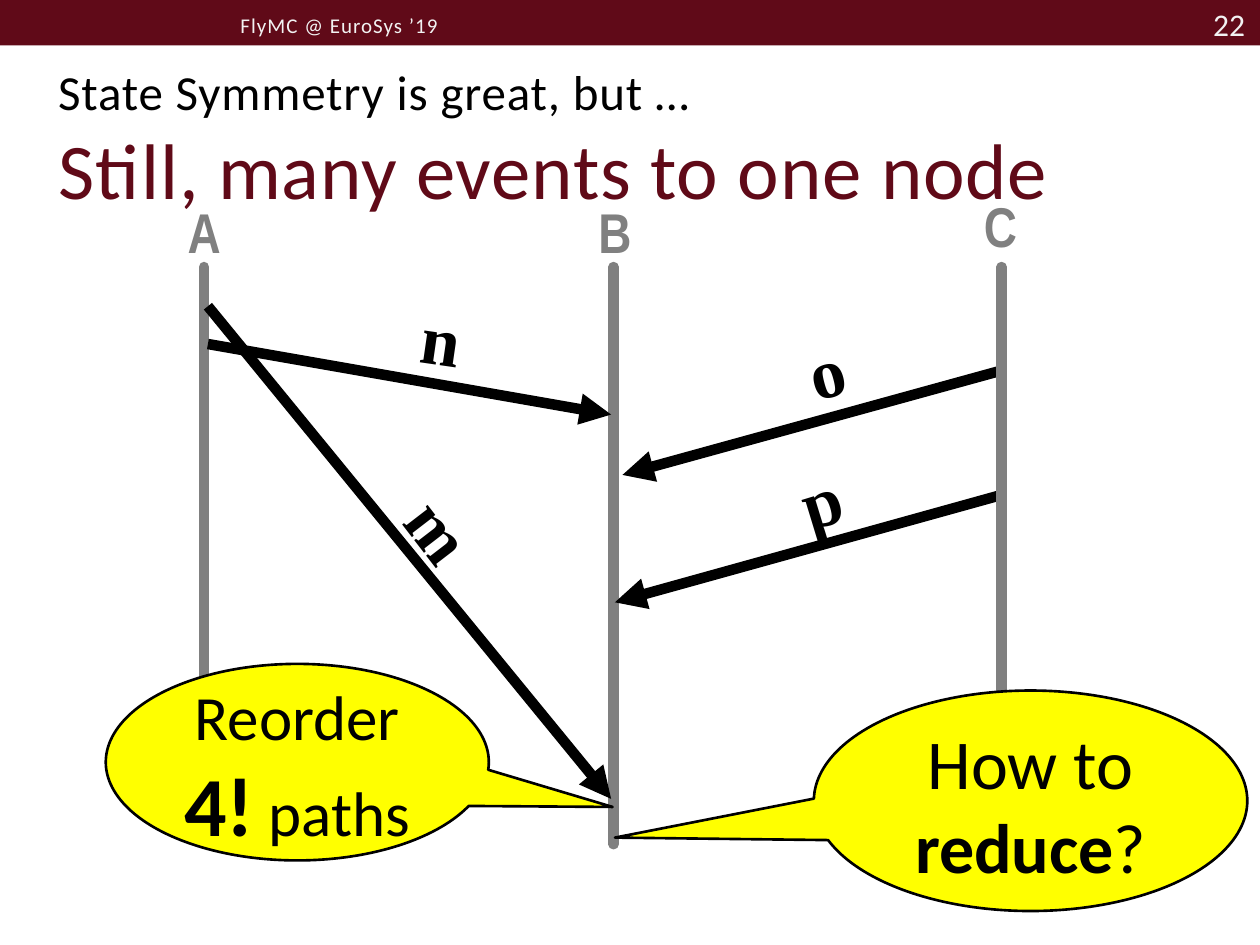
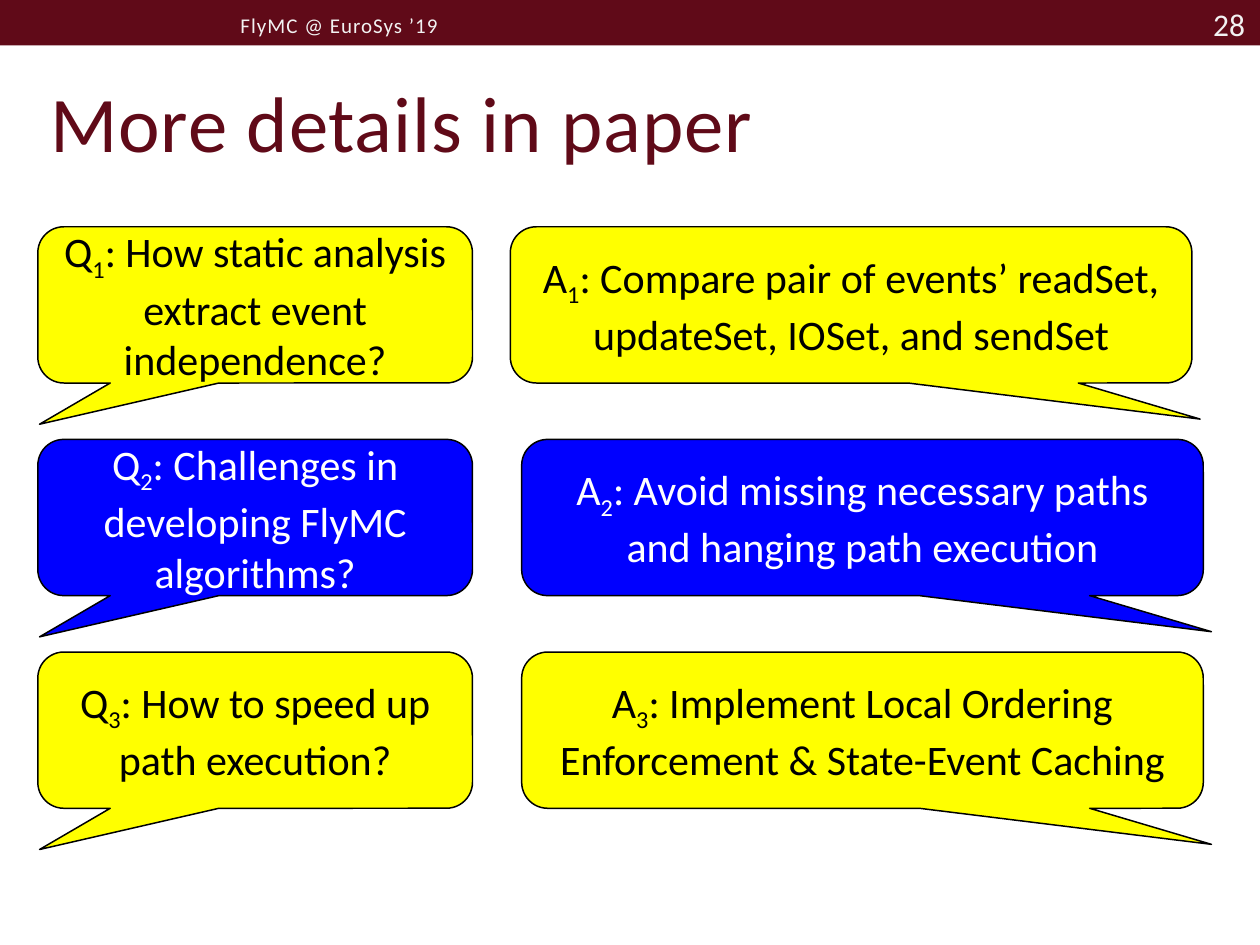
"""Build two FlyMC talk slides: events reaching one node, and questions answered in the paper."""
from pptx import Presentation
from pptx.dml.color import RGBColor
from pptx.enum.shapes import MSO_CONNECTOR, MSO_SHAPE
from pptx.enum.text import MSO_ANCHOR, MSO_AUTO_SIZE, PP_ALIGN
from pptx.oxml.ns import qn
from pptx.util import Pt
from lxml.etree import SubElement

MAROON, PALE, GREY = "600A18", "F2F2F2", "808080"
BLACK, WHITE, YELLOW, BLUE = "000000", "FFFFFF", "FFFF00", "0000FF"


def paint(target, color):
    target.solid()
    target.fore_color.rgb = RGBColor.from_string(color)


def write(shape, runs, size, color, font="Calibri", bold=False, align=PP_ALIGN.LEFT,
          anchor=MSO_ANCHOR.MIDDLE, wrap=True, spacing=0):
    frame = shape.text_frame
    frame.word_wrap, frame.vertical_anchor = wrap, anchor
    frame.auto_size = MSO_AUTO_SIZE.NONE
    paragraph = frame.paragraphs[0]
    paragraph.alignment = align
    for text, changes in runs:
        if text == "\n":
            paragraph.add_line_break()
            continue
        run = paragraph.add_run()
        run.text = text
        run.font.name = font
        run.font.size = Pt(changes.get("size", size))
        run.font.bold = changes.get("bold", bold)
        paint(run.font.fill, changes.get("color", color))
        properties = run.font._element
        if spacing:
            properties.set("spc", str(spacing))
        if "baseline" in changes:
            properties.set("baseline", str(changes["baseline"]))


deck = Presentation()
deck.slide_width, deck.slide_height = Pt(720), Pt(540)

headings = [
    ("22", (26, 33, 679, 90), [("State Symmetry is great, but …", {"size": 28, "color": BLACK}),
                               ("\n", {}), ("Still, many events to one node", {})]),
    ("28", (21.6, 33.8, 679, 62.6), [("More details in paper", {})]),
]
slides = []
for number, title_place, title_runs in headings:
    slide = deck.slides.add_slide(deck.slide_layouts[5])
    slides.append(slide)
    band = slide.shapes.add_shape(MSO_SHAPE.RECTANGLE, 0, 0, Pt(720), Pt(26))
    band.shadow.inherit = False
    paint(band.fill, MAROON)
    band.line.fill.background()

    title = slide.shapes.title
    title.left, title.top, title.width, title.height = map(Pt, title_place)
    title.text_frame.margin_bottom = 0
    write(title, title_runs, 45, MAROON, anchor=MSO_ANCHOR.BOTTOM, spacing=50)

    venue = slide.shapes.add_textbox(Pt(130.3), Pt(3.6), Pt(256.3), Pt(21))
    write(venue, [("FlyMC @ EuroSys ’19", {})], 12, PALE, spacing=60)
    page = slide.shapes.add_textbox(Pt(655.2), Pt(-0.7), Pt(63.4), Pt(28.8))
    write(page, [(number, {})], 18, PALE, align=PP_ALIGN.RIGHT)

events, questions = slides

lifeline_top = 152.6
timeline = [
    ((116.6, lifeline_top), (116.6, 473), GREY),
    ((350.6, lifeline_top), (350.6, 482.4), GREY),
    ((118.8, 196.6), (349.2, 236.9), BLACK),
    ((572.4, 211.7), (355.7, 271.4), BLACK),
    ((118.8, 175), (349.2, 456.5), BLACK),
    ((571.7, 283), (351.4, 344.2), BLACK),
    ((572.4, lifeline_top), (572.4, 473), GREY),
]
for start, end, color in timeline:
    message = events.shapes.add_connector(MSO_CONNECTOR.STRAIGHT, *map(Pt, start + end))
    message.line.width = Pt(6)
    paint(message.line.fill, color)
    stroke = message.line._get_or_add_ln()
    if color == GREY:
        stroke.set("cap", "rnd")
    else:
        SubElement(stroke, qn("a:tailEnd"), type="triangle")
    SubElement(message._element.spPr, qn("a:effectLst"))

for node, left, top in [("A", 100.1, 109.4), ("B", 334.8, 109.4), ("C", 555.1, 105.8)]:
    node_label = events.shapes.add_textbox(Pt(left), Pt(top), Pt(33.8), Pt(46))
    write(node_label, [(node, {})], 32, GREY, "Arial Narrow", True,
          anchor=MSO_ANCHOR.TOP, wrap=False)

event_labels = [
    ("n", 234, 165.6, 36.7, 8.3),
    ("m", 228.2, 275, 48.2, 52.4),
    ("p", 449.3, 248.4, 100, 343),
    ("o", 455, 183.6, 34.6, 345.4),
]
for event, left, top, width, angle in event_labels:
    event_label = events.shapes.add_textbox(Pt(left), Pt(top), Pt(width), Pt(55.4))
    event_label.rotation = angle
    write(event_label, [(event, {})], 40, BLACK, "Times New Roman", True,
          anchor=MSO_ANCHOR.TOP)

remarks = [
    ((60.5, 379.4, 218.9, 112.3), (0.823, 0.228), 36,
     [("Reorder ", {}), ("4!", {"size": 48, "bold": True}), (" paths", {})]),
    ((465.1, 394.6, 247.7, 126), (-0.959, 0.167), 40,
     [("How to ", {}), ("reduce", {"bold": True}), ("?", {})]),
]
callouts = [(events, MSO_SHAPE.OVAL_CALLOUT, place, pointer, YELLOW, 1.5, size, runs, BLACK, 0)
            for place, pointer, size, runs in remarks]

dialogue = [
    (YELLOW, BLACK, 291.6, "How static analysis extract event independence?",
     "Compare pair of events’ readSet, updateSet, IOSet, and sendSet"),
    (BLUE, WHITE, 298.1, "Challenges in developing FlyMC algorithms?",
     "Avoid missing necessary paths and hanging path execution"),
    (YELLOW, BLACK, 298.1, "How to speed up path execution?",
     "Implement Local Ordering Enforcement & State-Event Caching"),
]
for index, (fill, ink, answer_left, question, answer) in enumerate(dialogue):
    top = 129.6 + index * 121.5
    for letter, left, width, pointer, text in [
            ("Q", 21.6, 248.4, (-0.496, 0.764), question),
            ("A", answer_left, 389.5, (0.512, 0.731), answer)]:
        runs = [(letter, {}), (str(index + 1), {"baseline": -25000}), (f": {text}", {})]
        callouts.append((questions, MSO_SHAPE.ROUNDED_RECTANGULAR_CALLOUT,
                         (left, top, width, 89.3), pointer, fill, 0.85, 24, runs, ink, 3.6))

for slide, outline, place, pointer, fill, border, size, runs, ink, bottom_inset in callouts:
    callout = slide.shapes.add_shape(outline, *map(Pt, place))
    callout.shadow.inherit = False
    callout.adjustments[0], callout.adjustments[1] = pointer
    paint(callout.fill, fill)
    paint(callout.line.fill, BLACK)
    callout.line.width = Pt(border)
    callout.text_frame.margin_bottom = Pt(bottom_inset)
    write(callout, runs, size, ink, align=PP_ALIGN.CENTER)

deck.save("out.pptx")
